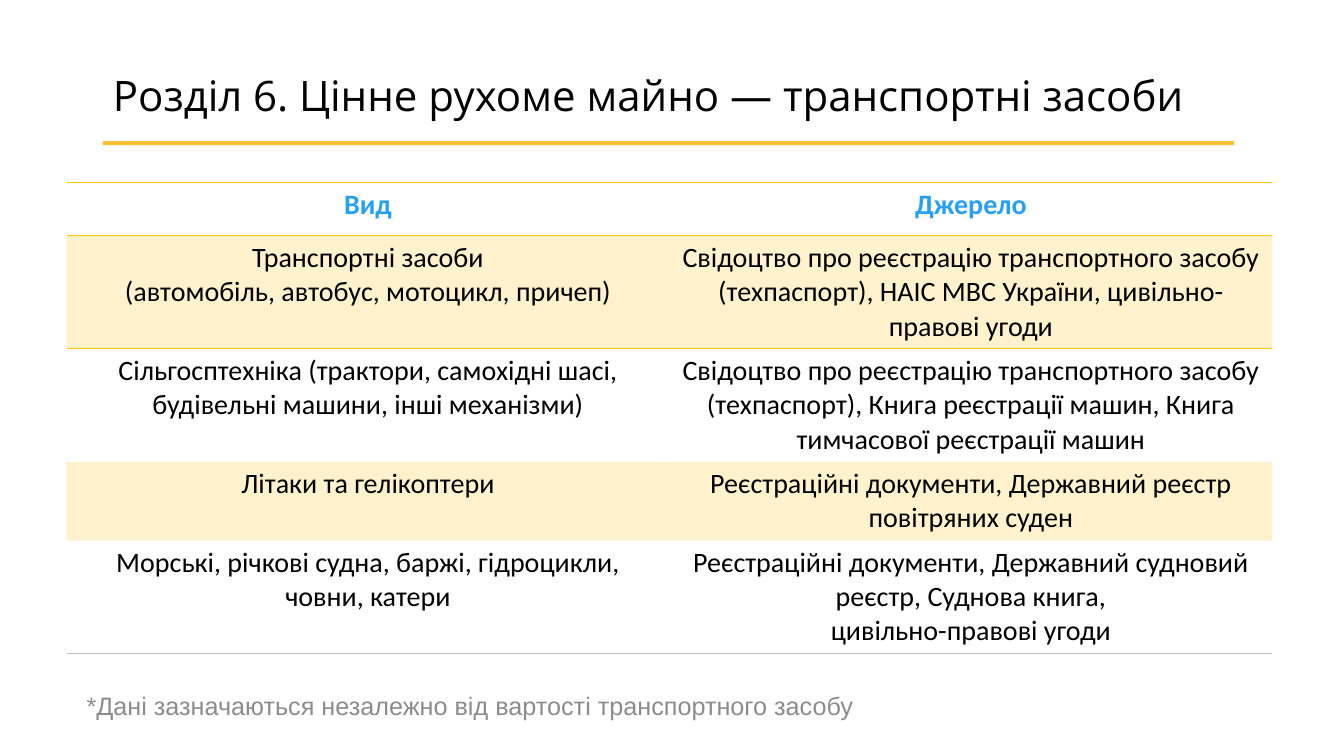
from lxml.etree import SubElement
from pptx import Presentation
from pptx.dml.color import RGBColor
from pptx.enum.shapes import MSO_CONNECTOR
from pptx.enum.text import MSO_ANCHOR, PP_ALIGN
from pptx.oxml import parse_xml
from pptx.oxml.ns import nsdecls, qn
from pptx.util import Inches, Pt

TITLE = "Розділ 6. Цінне рухоме майно — транспортні засоби"
HEADINGS = ("Вид", "Джерело")
SOURCES = [
    ("Транспортні засоби\n(автомобіль, автобус, мотоцикл, причеп)",
     "Свідоцтво про реєстрацію транспортного засобу (техпаспорт), "
     "НАІС МВС України, цивільно-правові угоди"),
    ("Сільгосптехніка (трактори, самохідні шасі, будівельні машини, інші механізми)",
     "Свідоцтво про реєстрацію транспортного засобу (техпаспорт), "
     "Книга реєстрації машин, Книга тимчасової реєстрації машин"),
    ("Літаки та гелікоптери",
     "Реєстраційні документи, Державний реєстр повітряних суден"),
    ("Морські, річкові судна, баржі, гідроцикли, човни, катери",
     "Реєстраційні документи, Державний судновий реєстр, Суднова книга,\n"
     "цивільно-правові угоди"),
]
FOOTNOTE = "*Дані зазначаються незалежно від вартості транспортного засобу"

BLACK = RGBColor(0x00, 0x00, 0x00)
BLUE = RGBColor(0x27, 0xA0, 0xF2)
GOLD = RGBColor(0xFF, 0xC0, 0x00)
RULE_GOLD = RGBColor(0xFB, 0xBB, 0x1C)
NOTE_GRAY = RGBColor(0x8C, 0x8C, 0x8C)
EDGE_GRAY = RGBColor(0xBF, 0xBF, 0xBF)

ROW_HEIGHTS = (0.53, 1.11, 1.11, 0.76, 1.11)
COLUMN_WIDTH = 5.98
NO_STYLE = "{2D5ABB26-0587-4C30-8999-92F81FD0307C}"


def write(frame, text, *, size, font, color, bold=False, align=PP_ALIGN.LEFT):
    frame.word_wrap = True
    frame.text = text
    for paragraph in frame.paragraphs:
        paragraph.alignment = align
        paragraph.font.size = Pt(size)
        paragraph.font.name = font
        paragraph.font.bold = bold
        paragraph.font.color.rgb = color


def set_alpha(parent, percent):
    """Make the solid colour inside parent partly transparent."""
    color = next(parent.iter(qn("a:srgbClr")))
    SubElement(color, qn("a:alpha")).set("val", str(percent * 1000))


def add_borders(cell, borders):
    """Draw (side, colour, points) borders; sides are T then B."""
    properties = cell._tc.get_or_add_tcPr()
    for index, (side, color, points) in enumerate(borders):
        properties.insert(index, parse_xml(
            f'<a:ln{side} {nsdecls("a")} w="{Pt(points)}"><a:solidFill>'
            f'<a:srgbClr val="{color}"/></a:solidFill></a:ln{side}>'))


def add_sources_table(slide):
    rows = [HEADINGS, *SOURCES]
    frame = slide.shapes.add_table(
        len(rows), len(HEADINGS), Inches(0.66), Inches(1.81),
        Inches(COLUMN_WIDTH * len(HEADINGS)), Inches(sum(ROW_HEIGHTS)))
    table = frame.table
    table.first_row = table.horz_banding = False
    next(table._tbl.iter(qn("a:tableStyleId"))).text = NO_STYLE
    for column in table.columns:
        column.width = Inches(COLUMN_WIDTH)
    for r, (texts, height) in enumerate(zip(rows, ROW_HEIGHTS)):
        table.rows[r].height = Inches(height)
        heading = r == 0
        for c, text in enumerate(texts):
            cell = table.cell(r, c)
            write(cell.text_frame, text, size=20, font="Calibri", bold=heading,
                  color=BLUE if heading else BLACK, align=PP_ALIGN.CENTER)
            if r % 2:
                cell.fill.solid()
                cell.fill.fore_color.rgb = GOLD
                set_alpha(cell._tc.tcPr, 20)
            else:
                cell.fill.background()
            if heading:
                add_borders(cell, [("T", GOLD, 1), ("B", GOLD, 1)])
            elif r == 1:
                add_borders(cell, [("T", GOLD, 1)])
            elif r == len(rows) - 1:
                add_borders(cell, [("B", EDGE_GRAY, 0.75)])


def main():
    deck = Presentation()
    deck.slide_width, deck.slide_height = Inches(13.33), Inches(7.5)
    slide = deck.slides.add_slide(deck.slide_layouts[5])

    title = slide.shapes.title
    title.left, title.top = Inches(1.02), Inches(0.64)
    title.width, title.height = Inches(11.81), Inches(0.61)
    title.text_frame.vertical_anchor = MSO_ANCHOR.TOP
    write(title.text_frame, TITLE, size=30, font="Open Sans", color=BLACK)

    add_sources_table(slide)

    note = slide.shapes.add_textbox(
        Inches(0.76), Inches(6.84), Inches(11.31), Inches(0.51)).text_frame
    note.vertical_anchor = MSO_ANCHOR.MIDDLE
    note.margin_top, note.margin_bottom = 0, Inches(0.19)
    write(note, FOOTNOTE, size=18, font="Arial", color=NOTE_GRAY)

    rule = slide.shapes.add_connector(
        MSO_CONNECTOR.STRAIGHT, Inches(12.24), Inches(1.42), Inches(1.02), Inches(1.42))
    rule.line.color.rgb = RULE_GOLD
    rule.line.width = Pt(3)
    set_alpha(rule._element.spPr, 90)
    SubElement(rule._element.spPr, qn("a:effectLst"))

    deck.save("out.pptx")


if __name__ == "__main__":
    main()
